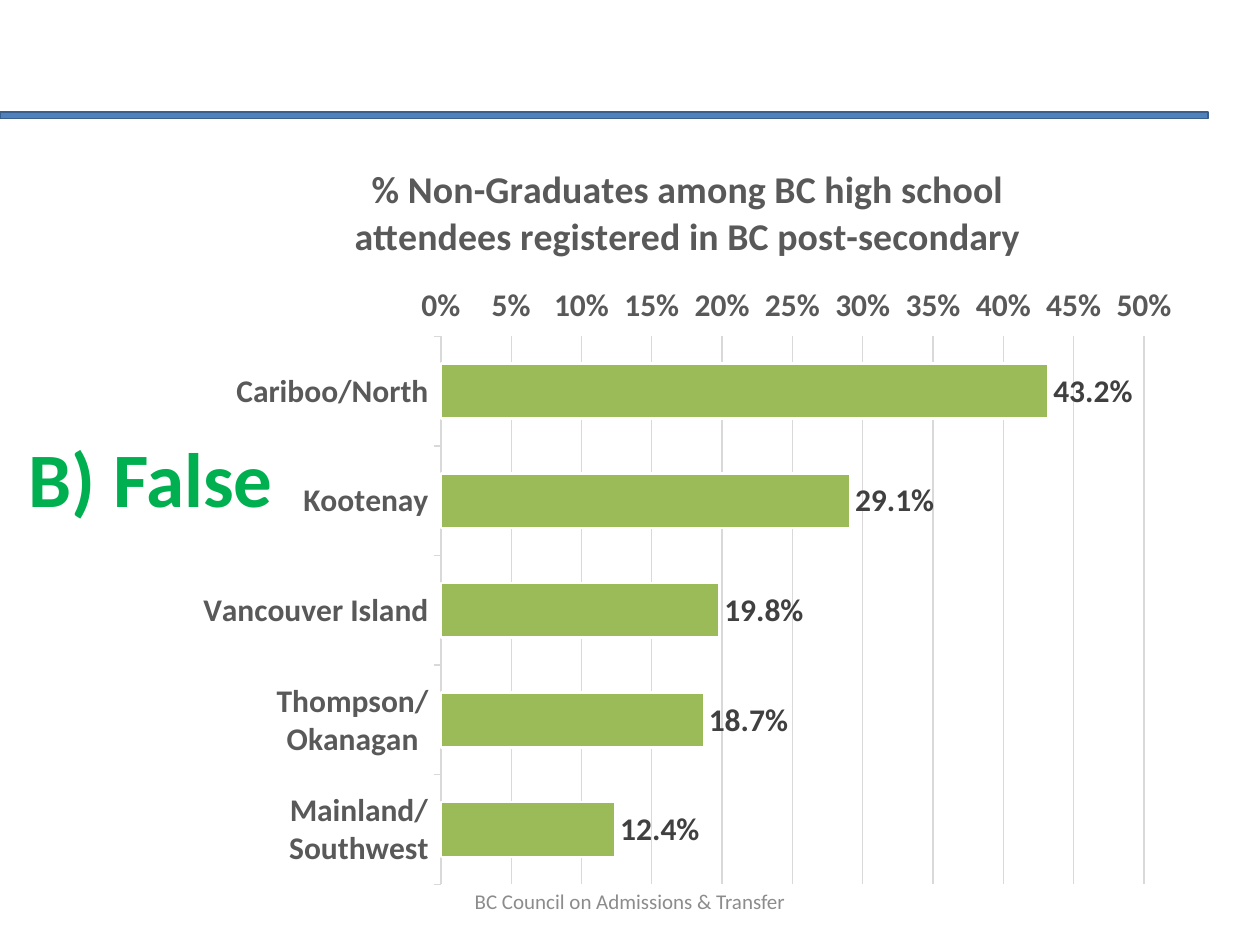
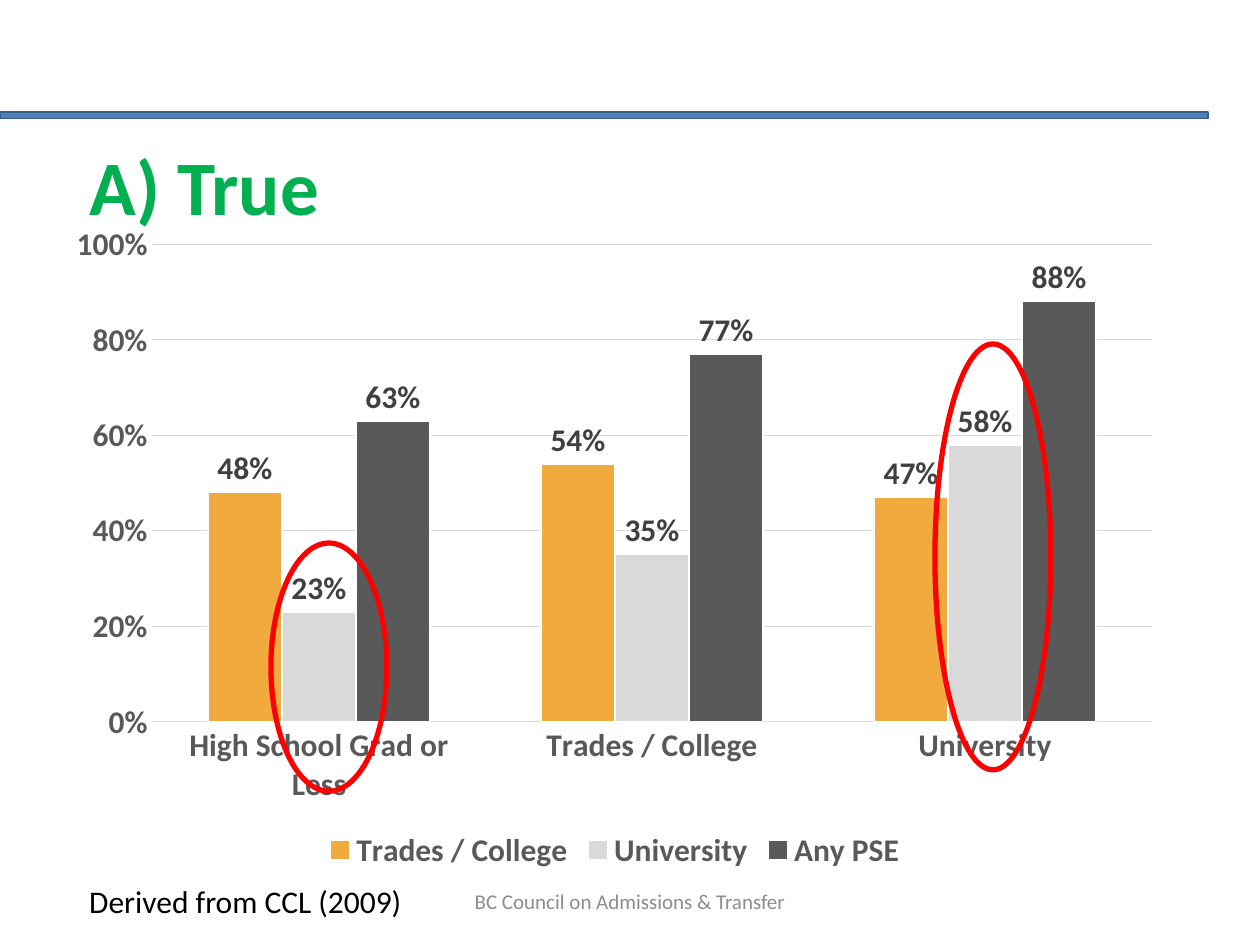
"""Builds two quiz-answer slides on post-secondary participation."""
from lxml import etree
from pptx import Presentation
from pptx.chart.data import CategoryChartData
from pptx.dml.color import RGBColor
from pptx.enum.chart import XL_CHART_TYPE as Kind, XL_LABEL_POSITION as LabelAt
from pptx.enum.chart import XL_LEGEND_POSITION as LegendAt, XL_TICK_MARK as Tick
from pptx.enum.shapes import MSO_SHAPE as Preset
from pptx.enum.text import MSO_ANCHOR as Anchor, PP_ALIGN as Align
from pptx.oxml.ns import qn
from pptx.util import Inches, Pt

FONT = "Calibri"
COLOURS = {
    "band": "4F81BD", "band_edge": "3A5F8C", "answer": "00B050", "footer": "8C8C8C",
    "black": "000000", "white": "FFFFFF", "axis": "595959", "label": "404040",
    "grid": "D9D9D9", "green": "9BBB59", "orange": "F1AA3E", "ring": "FF0000",
}


class Deck:
    """Holds the shared style and the current slide."""

    def __init__(self):
        self.prs = Presentation()
        self.prs.slide_width, self.prs.slide_height = Inches(10), Inches(7.5)
        self.slide = None

    def colour(self, name):
        return RGBColor.from_string(COLOURS[name])

    def box(self, at):
        return [Inches(length) for length in at]

    def style(self, font, size, colour, bold=False):
        font.name, font.size, font.bold = FONT, Pt(size), bold
        font.color.rgb = self.colour(colour)

    def outline(self, line, colour, width):
        line.color.rgb = self.colour(colour)
        line.width = Pt(width)

    def new_slide(self, titled=False):
        self.slide = self.prs.slides.add_slide(self.prs.slide_layouts[5 if titled else 6])
        self.shape(Preset.RECTANGLE, (0, 0.89, 9.59, 0.05), "band_edge", 1, "band")
        self.text("BC Council on Admissions & Transfer", (3.31, 6.95, 3.38, 0.4), 12,
                  "footer", align=Align.CENTER, anchor=Anchor.MIDDLE)

    def shape(self, preset, at, edge, width, fill=None):
        shape = self.slide.shapes.add_shape(preset, *self.box(at))
        shape.shadow.inherit = False
        if fill:
            shape.fill.solid()
            shape.fill.fore_color.rgb = self.colour(fill)
        else:
            shape.fill.background()
        self.outline(shape.line, edge, width)

    def fill_frame(self, frame, words, size, colour, bold, align, anchor, wrap, spacing):
        frame.word_wrap, frame.vertical_anchor = wrap, anchor
        paragraph = frame.paragraphs[0]
        paragraph.alignment, paragraph.line_spacing = align, spacing
        run = paragraph.add_run()
        run.text = words
        self.style(run.font, size, colour, bold)

    def text(self, words, at, size, colour, bold=False, align=Align.LEFT,
             anchor=Anchor.TOP, wrap=True, spacing=None):
        frame = self.slide.shapes.add_textbox(*self.box(at)).text_frame
        self.fill_frame(frame, words, size, colour, bold, align, anchor, wrap, spacing)

    def answer(self, words, at):
        title = self.slide.shapes.title
        if title is None:
            self.text(words, at, 44, "answer", True, spacing=0.9)
            return
        title.left, title.top, title.width, title.height = self.box(at)
        self.fill_frame(title.text_frame, words, 44, "answer", True, Align.LEFT,
                        Anchor.TOP, True, 0.9)

    def place(self, parent, index, chart_at, at):
        for old in parent.findall(qn("c:layout")):
            parent.remove(old)
        layout = etree.Element(qn("c:layout"))
        manual = etree.SubElement(layout, qn("c:manualLayout"))
        left, top, width, height = chart_at
        settings = {"xMode": "edge", "yMode": "edge",
                    "x": (at[0] - left) / width, "y": (at[1] - top) / height}
        if len(at) == 4:
            settings = {"layoutTarget": "inner", **settings,
                        "w": at[2] / width, "h": at[3] / height}
        for tag, value in settings.items():
            etree.SubElement(manual, qn(f"c:{tag}")).set("val", str(value))
        parent.insert(index, layout)

    def axis(self, axis, tick, line):
        self.style(axis.tick_labels.font, 18, "axis", True)
        axis.major_tick_mark, axis.minor_tick_mark = tick, Tick.NONE
        if line:
            self.outline(axis.format.line, "grid", 0.75)
        else:
            axis.format.line.fill.background()

    def chart(self, kind, at, categories, series, plot_at, top, step, gap, tick,
              edge, label_format):
        data = CategoryChartData()
        data.categories = categories
        for name, values, _ in series:
            data.add_series(name, values)
        chart = self.slide.shapes.add_chart(kind, *self.box(at), data).chart
        self.style(chart.font, 18, "black", True)
        chart.has_title = chart.has_legend = False
        self.axis(chart.category_axis, tick, True)
        scale = chart.value_axis
        self.axis(scale, tick, False)
        scale.minimum_scale, scale.maximum_scale, scale.major_unit = 0, top, step
        scale.tick_labels.number_format = "0%"
        scale.tick_labels.number_format_is_linked = False
        scale.has_major_gridlines = True
        self.outline(scale.major_gridlines.format.line, "grid", 0.75)
        plot = chart.plots[0]
        plot.gap_width, plot.overlap, plot.vary_by_categories = gap, 0, False
        for bars, (_, _, fill) in zip(plot.series, series):
            bars.format.fill.solid()
            bars.format.fill.fore_color.rgb = self.colour(fill)
            self.outline(bars.format.line, "white", edge)
            labels = bars.data_labels
            labels.show_value, labels.position = True, LabelAt.OUTSIDE_END
            labels.number_format, labels.number_format_is_linked = label_format, False
            self.style(labels.font, 18, "label", True)
        self.place(chart.element.find(f".//{qn('c:plotArea')}"), 0, at, plot_at)
        return chart

    def chart_title(self, chart, words, chart_at, at):
        chart.has_title = True
        paragraph = chart.chart_title.text_frame.paragraphs[0]
        run = paragraph.add_run()
        run.text = words
        self.style(run.font, 21.6, "axis", True)
        self.place(chart.element.find(f".//{qn('c:title')}"), 1, chart_at, at)

    def legend(self, chart):
        chart.has_legend = True
        chart.legend.position = LegendAt.BOTTOM
        chart.legend.include_in_layout = False
        self.style(chart.legend.font, 18, "axis", True)


def non_graduates(deck):
    """Shows the share of non-graduates by region."""
    deck.new_slide()
    deck.answer("B) False", (0.13, 3.45, 9.01, 0.68))
    regions = ["Cariboo/North", "Kootenay", "Vancouver Island", "Thompson/Okanagan",
               "Mainland/Southwest"]
    shares = [("Series 1", (0.432, 0.291, 0.198, 0.187, 0.124), "green")]
    chart_at = (1.46, 1.13, 8, 6.02)
    chart = deck.chart(Kind.BAR_CLUSTERED, chart_at, regions, shares,
                       (3.5, 2.67, 5.58, 4.35), top=0.5, step=0.05, gap=100,
                       tick=Tick.OUTSIDE, edge=1.5, label_format="0.0%")
    chart.category_axis.reverse_order = True
    deck.chart_title(chart, "% Non-Graduates among BC high school attendees "
                     "registered in BC post-secondary", chart_at, (2.76, 1.23))


def parental_education(deck):
    """Compares participation by level of education."""
    deck.new_slide(titled=True)
    deck.answer("A) True", (0.61, 1.13, 8.36, 1.05))
    levels = ["High School Grad or Less", "Trades / College", "University"]
    participation = [
        ("Trades / College", (0.48, 0.54, 0.47), "orange"),
        ("University", (0.23, 0.35, 0.58), "grid"),
        ("Any PSE", (0.63, 0.77, 0.88), "axis"),
    ]
    chart = deck.chart(Kind.COLUMN_CLUSTERED, (0.44, 1.68, 8.88, 5.27), levels,
                       participation, (1.21, 1.94, 7.93, 3.79), top=1, step=0.2,
                       gap=150, tick=Tick.NONE, edge=0.75, label_format="0%")
    deck.legend(chart)
    deck.text("Derived from CCL (2009)", (0.61, 6.95, 2.71, 0.4), 18, "black", wrap=False)
    for ring in ((2.15, 4.31, 0.92, 1.97), (7.42, 2.73, 0.92, 3.38)):
        deck.shape(Preset.OVAL, ring, "ring", 3)


def main():
    deck = Deck()
    non_graduates(deck)
    parental_education(deck)
    deck.prs.save("out.pptx")


if __name__ == "__main__":
    main()
